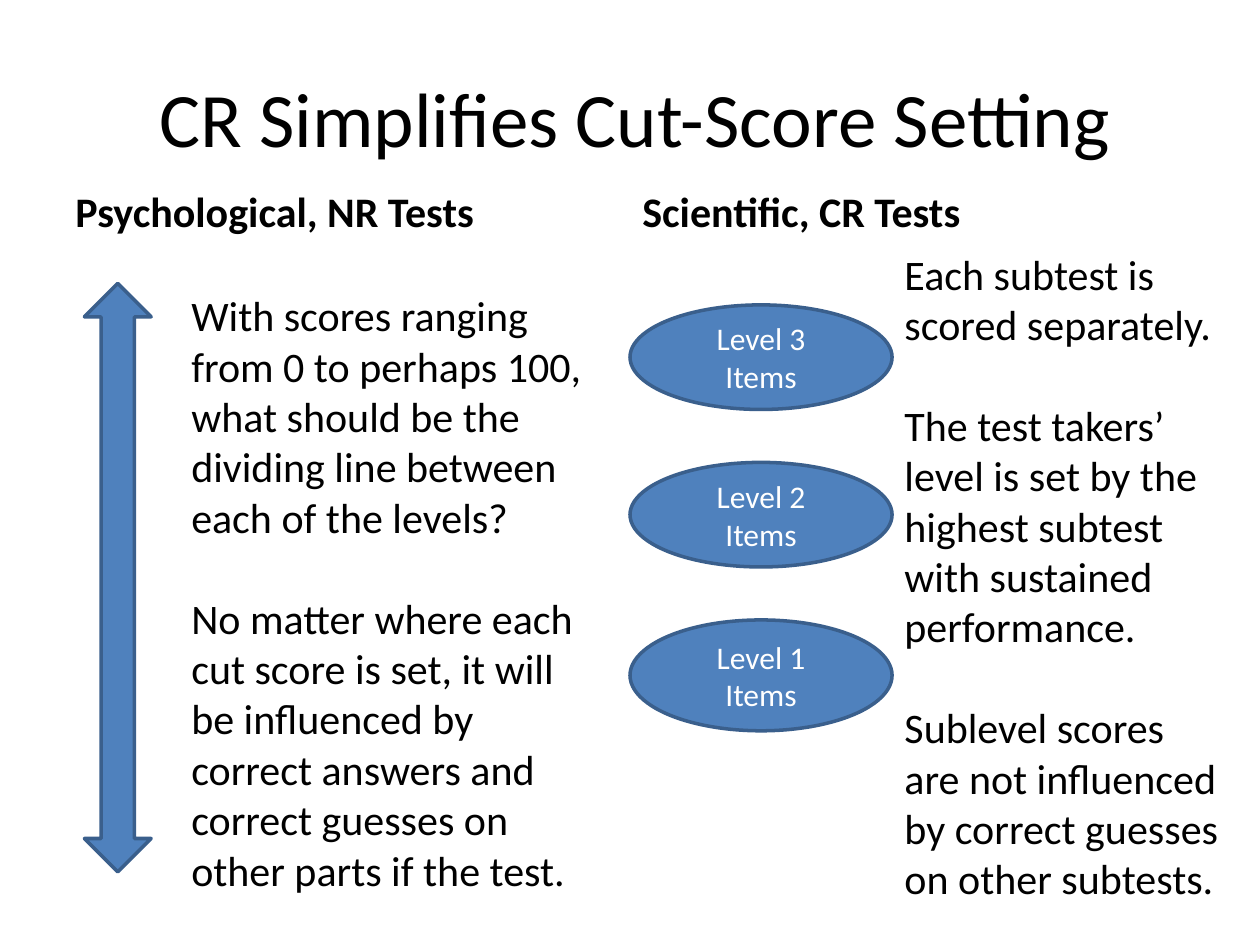
import pptx
import pptx.dml.color
import pptx.enum.shapes
import pptx.enum.text
import pptx.util

Inches = pptx.util.Inches
Pt = pptx.util.Pt
Shape = pptx.enum.shapes.MSO_SHAPE
Anchor = pptx.enum.text.MSO_ANCHOR
Align = pptx.enum.text.PP_ALIGN
AutoSize = pptx.enum.text.MSO_AUTO_SIZE

BLUE, EDGE, BLACK, WHITE = "4F81BD", "3A5F8C", "000000", "FFFFFF"
PARAGRAPH_GAP = 28.8  # one line of 24 pt text

NR_TEXT = [
    "With scores ranging from 0 to perhaps 100, what should be the dividing "
    "line between each of the levels?",
    "No matter where each cut score is set, it will be influenced by correct "
    "answers and correct guesses on other parts if the test.",
]
CR_TEXT = [
    "Each subtest is scored separately.",
    "The test takers’ level is set by the highest subtest with sustained "
    "performance.",
    "Sublevel scores are not influenced by correct guesses on other subtests.",
]


def color(hex_value):
    return pptx.dml.color.RGBColor.from_string(hex_value)


def write(frame, texts, size, hex_value=BLACK, bold=False,
          align=Align.LEFT, anchor=Anchor.TOP):
    """Fill a text frame with paragraphs set one line apart."""
    frame.word_wrap = True
    frame.vertical_anchor = anchor
    for index, text in enumerate(texts):
        para = frame.paragraphs[0] if index == 0 else frame.add_paragraph()
        para.text = text
        para.alignment = align
        if index:
            para.space_before = Pt(PARAGRAPH_GAP)
        para.font.name = "Calibri"
        para.font.size = Pt(size)
        para.font.bold = bold
        para.font.color.rgb = color(hex_value)


def add_text(page, left, top, width, height, texts, size, **style):
    box = page.shapes.add_textbox(
        Inches(left), Inches(top), Inches(width), Inches(height))
    write(box.text_frame, texts, size, **style)
    return box


def add_blue_shape(page, kind, left, top, width, height):
    shape = page.shapes.add_shape(
        kind, Inches(left), Inches(top), Inches(width), Inches(height))
    shape.shadow.inherit = False
    shape.fill.solid()
    shape.fill.fore_color.rgb = color(BLUE)
    shape.line.color.rgb = color(EDGE)
    shape.line.width = Pt(2)
    return shape


def add_heading(page, left, top, width, text):
    add_text(page, left, top, width, 0.92, [text], 24,
             bold=True, anchor=Anchor.BOTTOM)


def add_explanation(page, left, top, width, height, texts):
    box = add_text(page, left, top, width, height, texts, 24)
    box.text_frame.auto_size = AutoSize.SHAPE_TO_FIT_TEXT


def add_nr_column(page, left, top):
    add_heading(page, left, top, 4.42, "Psychological, NR Tests")
    add_blue_shape(page, Shape.UP_DOWN_ARROW, left + 0.17, top + 1.25, 0.53, 4.67)
    add_explanation(page, left + 0.92, top + 1.25, 3.33, 4.95, NR_TEXT)


def add_cr_column(page, left, top):
    add_heading(page, left, top, 4.5, "Scientific, CR Tests")
    oval_width, oval_pitch = 2.08, 1.25
    for row, (level, height) in enumerate([(3, 0.83), (2, 0.83), (1, 0.88)]):
        oval = add_blue_shape(page, Shape.OVAL, left,
                              top + 1.42 + row * oval_pitch, oval_width, height)
        write(oval.text_frame, [f"Level {level} Items"], 18, WHITE,
              align=Align.CENTER, anchor=Anchor.MIDDLE)
    add_explanation(page, left + oval_width, top + 0.92, 2.75, 5.35, CR_TEXT)


def main():
    deck = pptx.Presentation()
    deck.slide_width, deck.slide_height = Inches(10), Inches(7.5)
    page = deck.slides.add_slide(deck.slide_layouts[6])
    add_text(page, 0.25, 0.3, 9.58, 1.25, ["CR Simplifies Cut-Score Setting"],
             44, align=Align.CENTER, anchor=Anchor.MIDDLE)
    add_nr_column(page, 0.5, 1)
    add_cr_column(page, 5, 1)
    deck.save("out.pptx")


if __name__ == "__main__":
    main()
